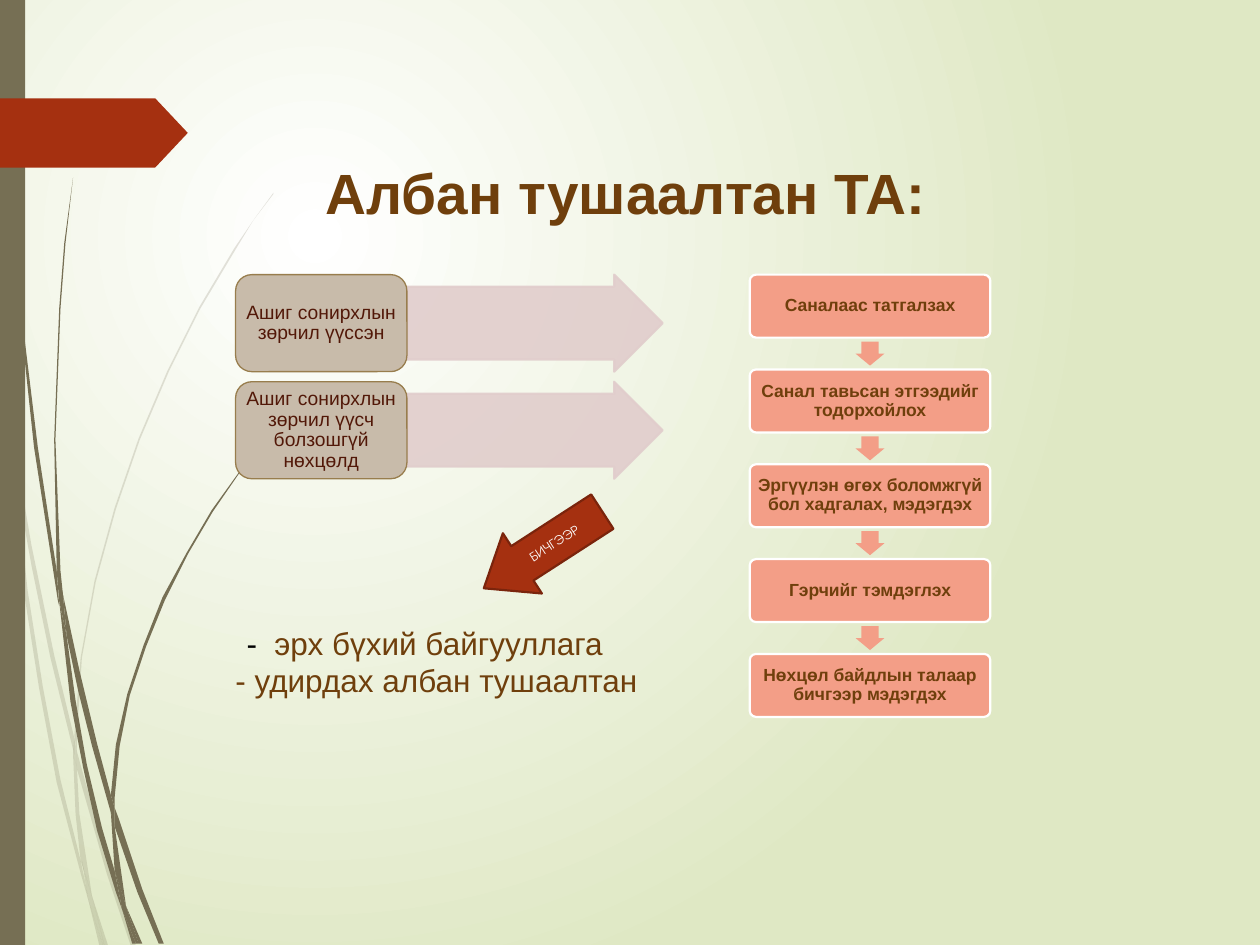
from lxml import etree
from pptx import Presentation
from pptx.dml.color import RGBColor
from pptx.enum.shapes import MSO_SHAPE
from pptx.enum.text import MSO_ANCHOR, PP_ALIGN
from pptx.oxml.ns import qn
from pptx.util import Inches, Pt

RECT, ROUNDED, PENTAGON = MSO_SHAPE.RECTANGLE, MSO_SHAPE.ROUNDED_RECTANGLE, MSO_SHAPE.PENTAGON
RIGHT, LEFT, DOWN = MSO_SHAPE.RIGHT_ARROW, MSO_SHAPE.LEFT_ARROW, MSO_SHAPE.DOWN_ARROW
MIDDLE, CENTER = MSO_ANCHOR.MIDDLE, PP_ALIGN.CENTER

# Content
TITLE = "Албан тушаалтан ТА:"
CONFLICTS = ["Ашиг сонирхлын зөрчил үүссэн",
             "Ашиг сонирхлын зөрчил үүсч болзошгүй нөхцөлд"]
STEPS = ["Саналаас татгалзах",
         "Санал тавьсан этгээдийг тодорхойлох",
         "Эргүүлэн өгөх боломжгүй бол хадгалах, мэдэгдэх",
         "Гэрчийг тэмдэглэх",
         "Нөхцөл байдлын талаар бичгээр мэдэгдэх"]
IN_WRITING = "БИЧГЭЭР"
# Each recipient line is a list of (text, colour name)
RECIPIENTS = [[("-\t", "black"), ("эрх бүхий байгууллага", "brown")],
              [("- удирдах албан тушаалтан", "brown")]]

COLORS = {"white": "FFFFFF", "black": "000000", "mist": "DFE8C4", "olive": "766F54",
          "rust": "A53010", "rust_edge": "7A240C", "brown": "6F3F0C",
          "salmon": "F39E87", "pink": "E1CDCC", "tan": "C8BBAA",
          "tan_edge": "987D4D", "maroon": "521808"}

# Outlines of the grass blade pieces in inches
PALE_GRASS = [
    [(0.08, 3.5), (0.06, 3.22), (0, 2.82), (0, 2.99), (0.07, 3.44)],
    [(0.4, 5.22), (0.59, 5.99), (0.59, 5.86), (0.43, 5.2), (0.25, 4.33), (0.1, 3.45),
     (0.12, 3.76), (0.25, 4.49)],
    [(0.64, 6.07), (0.61, 5.96), (0.61, 6.1), (0.85, 6.94), (1.04, 7.51), (1.08, 7.51),
     (0.88, 6.92)],
    [(0.83, 7.51), (0.86, 7.51), (0.73, 7.11)],
    [(0.64, 6.83), (0.48, 6.19), (0.34, 5.45), (0.22, 4.69), (0.12, 3.76), (0.08, 3.5),
     (0.19, 4.7), (0.31, 5.46), (0.45, 6.21), (0.64, 6.93), (0.7, 7.14), (0.69, 7.07)],
    [(0.58, 5.99), (0.6, 6.46), (0.64, 6.83), (0.73, 7.11), (0.63, 6.46), (0.61, 6.08)],
    [(0.61, 5.84), (0.65, 5.22), (0.76, 4.62), (0.92, 4.04), (1.11, 3.49), (1.34, 2.95),
     (1.59, 2.45), (1.87, 1.98), (2.01, 1.75), (2.17, 1.54), (2.17, 1.53), (2.01, 1.75),
     (1.86, 1.97), (1.58, 2.44), (1.33, 2.94), (1.1, 3.48), (0.91, 4.03), (0.75, 4.61),
     (0.64, 5.22), (0.59, 5.84), (0.61, 5.96)],
    [(0.7, 7.14), (0.79, 7.51), (0.82, 7.51)],
    [(0.61, 6.08), (0.61, 5.96), (0.59, 5.86), (0.58, 5.99)],
    [(0.67, 6.92), (0.65, 6.83), (0.7, 7.14), (0.82, 7.51), (0.83, 7.51), (0.73, 7.11)],
]
DARK_GRASS = [
    [(0.05, 1.1), (0.14, 2.33), (0.27, 3.55), (0.46, 4.77), (0.47, 4.81), (0.45, 4.53),
     (0.3, 3.55), (0.15, 2.32), (0.06, 1.09), (0.03, 0), (0.02, 0)],
    [(0.73, 5.92), (0.88, 6.45), (0.88, 6.31), (0.77, 5.9), (0.63, 5.32), (0.5, 4.72),
     (0.53, 5.05), (0.62, 5.48)],
    [(0.94, 6.49), (0.91, 6.41), (0.91, 6.56), (1.09, 7.08), (1.26, 7.49), (1.3, 7.49),
     (1.13, 7.06)],
    [(0.91, 6.91), (0.81, 6.57), (0.69, 6.07), (0.6, 5.56), (0.53, 5.05), (0.47, 4.77),
     (0.56, 5.57), (0.66, 6.09), (0.77, 6.59), (0.92, 7.08), (0.97, 7.22)],
    [(0.5, 4.72), (0.48, 4.53), (0.44, 3.49), (0.48, 2.45), (0.52, 1.93), (0.58, 1.41),
     (0.51, 1.93), (0.47, 2.45), (0.43, 3.49), (0.45, 4.49), (0.49, 4.72)],
    [(1.1, 7.49), (1.13, 7.49), (1, 7.19)],
    [(0.47, 4.77), (0.53, 5.05), (0.5, 4.72), (0.45, 4.49), (0.45, 4.53)],
    [(0.91, 6.33), (0.95, 5.92), (1.03, 5.52), (1.16, 5.13), (1.31, 4.76), (1.49, 4.4),
     (1.69, 4.06), (1.91, 3.74), (2.03, 3.59), (2.16, 3.44), (2.15, 3.44), (1.91, 3.73),
     (1.68, 4.05), (1.48, 4.39), (1.29, 4.74), (1.14, 5.12), (1.01, 5.51), (0.92, 5.91),
     (0.88, 6.31), (0.91, 6.41)],
    [(0.97, 7.22), (1.05, 7.49), (1.08, 7.49)],
    [(0.88, 6.45), (0.91, 6.91), (1, 7.19), (0.91, 6.56), (0.9, 6.51)],
    [(0.88, 6.45), (0.91, 6.56), (0.91, 6.41), (0.88, 6.31)],
    [(0.96, 7.06), (0.91, 6.91), (0.97, 7.22), (1.08, 7.49), (1.1, 7.49), (1, 7.19)],
]


def rgb(name):
    return RGBColor.from_string(COLORS[name])


def style(sp, fill, line=None, width=1.25, opacity=100):
    sp.shadow.inherit = False
    sp.fill.solid()
    sp.fill.fore_color.rgb = rgb(fill)
    if line:
        sp.line.color.rgb = rgb(line)
        sp.line.width = Pt(width)
    else:
        sp.line.fill.background()
    if opacity < 100:
        for color in sp._element.spPr.iter(qn("a:srgbClr")):
            etree.SubElement(color, qn("a:alpha"), val=str(opacity * 1000))


def add_shape(s, kind, box, fill, adj=(), **look):
    sp = s.shapes.add_shape(kind, *map(Inches, box))
    for i, value in enumerate(adj):
        sp.adjustments[i] = value
    style(sp, fill, **look)
    return sp


def add_blade(s, outline, opacity):
    points = [(Inches(x), Inches(y)) for x, y in outline]
    fb = s.shapes.build_freeform(*points[0])
    fb.add_line_segments(points[1:], close=True)
    style(fb.convert_to_shape(), "olive", opacity=opacity)


def set_text(sp, text, size, color, bold=False, font="Arial", inset=(0.1, 0.05), spacing=None):
    tf = sp.text_frame
    tf.word_wrap = True
    tf.vertical_anchor = MIDDLE
    tf.margin_left = tf.margin_right = Inches(inset[0])
    tf.margin_top = tf.margin_bottom = Inches(inset[1])
    p = tf.paragraphs[0]
    p.text = text
    p.alignment = CENTER
    p.line_spacing = spacing
    p.font.size, p.font.name, p.font.bold = Pt(size), font, bold
    p.font.color.rgb = rgb(color)


def add_background(s):
    fill = s.background.fill
    fill.gradient()
    for stop, name in zip(fill.gradient_stops, ("white", "mist")):
        stop.color.rgb = rgb(name)
    grad = next(s._element.iter(qn("a:gradFill")))
    grad.remove(grad.find(qn("a:lin")))
    circle = etree.SubElement(grad, qn("a:path"), path="circle")
    etree.SubElement(circle, qn("a:fillToRect"), l="50000", t="50000", r="100000", b="100000")


prs = Presentation()
prs.slide_width, prs.slide_height = Inches(10), Inches(7.5)
s = prs.slides.add_slide(prs.slide_layouts[6])

# Backdrop
add_background(s)
for grass, opacity in ((PALE_GRASS, 20), (DARK_GRASS, 100)):
    for outline in grass:
        add_blade(s, outline, opacity)
add_shape(s, RECT, (0, 0, 0.2, 7.5), "olive")
add_shape(s, PENTAGON, (0, 0.78, 1.49, 0.55), "rust", adj=[0.47])

# Title
title = s.shapes.add_textbox(*map(Inches, (1.55, 1.15, 6.83, 0.75)))
set_text(title, TITLE, 32.4, "brown", bold=True)

# Arrow to the recipients
arrow = add_shape(s, LEFT, (3.75, 4.08, 1.12, 0.57), "rust", adj=[0.57, 0.64], line="rust_edge")
arrow.rotation = 327.1
set_text(arrow, IN_WRITING, 7.6, "white", font="TeX Gyre Adventor")

# Recipients
tf = s.shapes.add_textbox(*map(Inches, (1.77, 4.9, 3.63, 0.75))).text_frame
tf.word_wrap = True
for i, runs in enumerate(RECIPIENTS):
    p = tf.add_paragraph() if i else tf.paragraphs[0]
    p.font.size, p.font.name = Pt(18), "Arial"
    for text, color in runs:
        r = p.add_run()
        r.text = text
        r.font.color.rgb = rgb(color)
hanging = tf.paragraphs[0]._p.get_or_add_pPr()
hanging.set("marL", str(Inches(0.31)))
hanging.set("indent", str(Inches(-0.22)))

# Steps, with a small arrow between neighbours
STEP_X, STEP_W, STEP_H, ARROW_W, ARROW_H = 5.95, 1.91, 0.5, 0.23, 0.19
STEP_TOP, STEP_PITCH = 2.18, 3.01 / 4
for i, text in enumerate(STEPS):
    y = STEP_TOP + i * STEP_PITCH
    sp = add_shape(s, ROUNDED, (STEP_X, y, STEP_W, STEP_H), "salmon", adj=[0.1], line="white")
    set_text(sp, text, 10, "brown", bold=True, inset=(0.03, 0.04), spacing=0.9)
    if i < len(STEPS) - 1:
        gap = STEP_PITCH - STEP_H
        add_shape(s, DOWN, (STEP_X + (STEP_W - ARROW_W) / 2, y + STEP_H + (gap - ARROW_H) / 2,
                            ARROW_W, ARROW_H), "salmon", adj=[0.6, 0.5])

# Conflict situations, each with a wide arrow
CASE_X, CASE_W, CASE_H, CASE_PITCH = 1.87, 1.36, 0.77, 0.85
for i, text in enumerate(CONFLICTS):
    y = STEP_TOP + i * CASE_PITCH
    add_shape(s, RIGHT, (CASE_X + CASE_W, y, 2.03, CASE_H), "pink", adj=[0.75, 0.5],
              line="pink", opacity=90)
    sp = add_shape(s, ROUNDED, (CASE_X, y, CASE_W, CASE_H), "tan", line="tan_edge", width=0.75)
    set_text(sp, text, 11, "maroon", inset=(0.04, 0.02), spacing=0.9)

prs.save("out.pptx")
